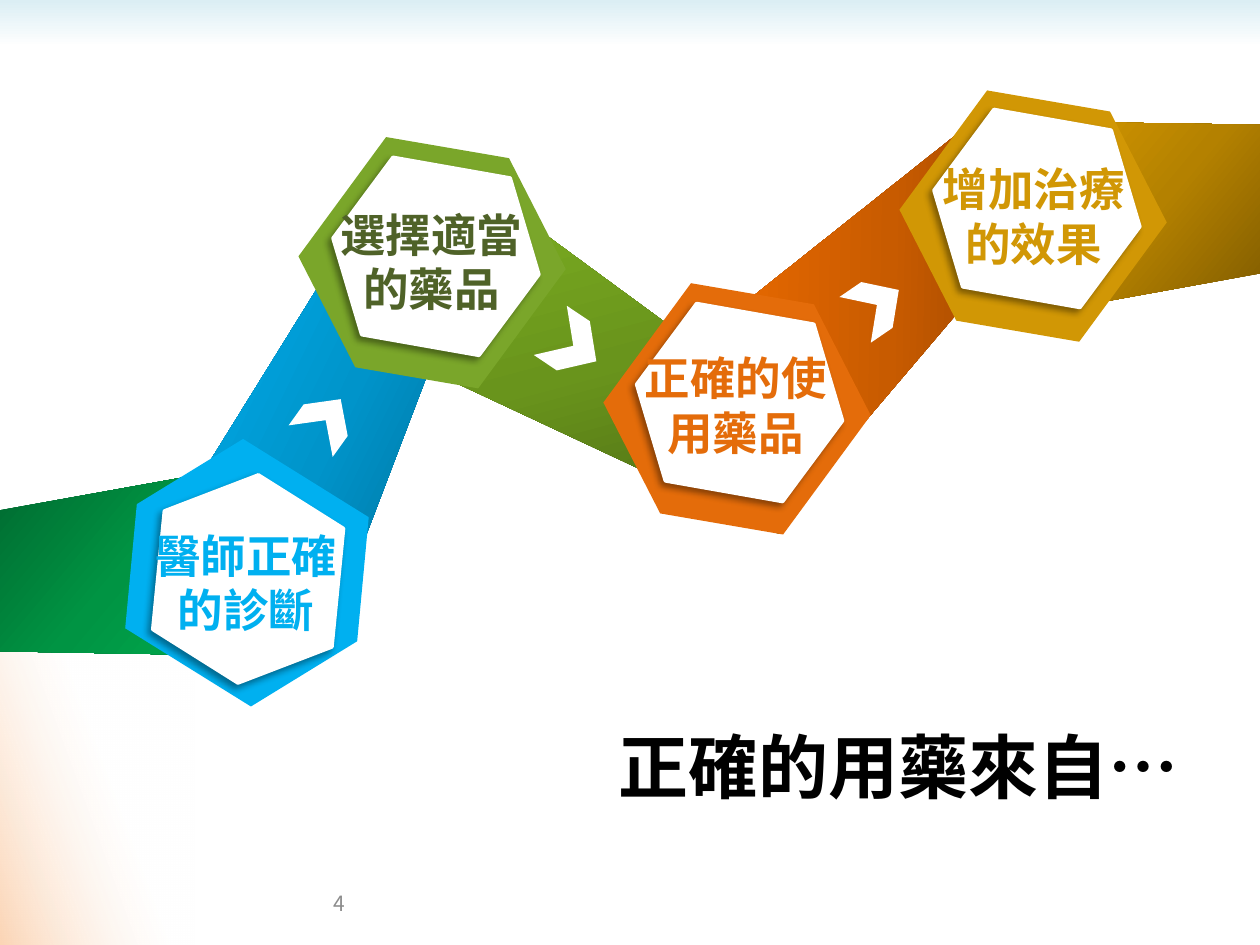
from lxml import etree
from pptx import Presentation
from pptx import util as u
from pptx.dml.color import RGBColor
from pptx.enum import shapes, text
from pptx.oxml import ns

CJK = "Noto Sans CJK SC"
C = {
    "white": "FFFFFF", "black": "000000", "grey": "8C8C8C",
    "sky": "DBEEF4", "peach": "FCD5B5",
    "blue": "00B0F0", "green": "7AA62A", "dark_green": "4F6228",
    "orange": "E46C0A", "gold": "D19705",
}
# Dark, middle and light stop of each ribbon
RIBBON = {
    "emerald": ("00682F", "009443", "00B050"),
    "gold": ("7F5B00", "B48100", "D69900"),
    "orange": ("8D4000", "C85B00", "EE6B00"),
    "green": ("4A6813", "69941C", "7DAF21"),
    "blue": ("00688E", "0094CA", "00B0F0"),
}
# Colour, gradient angle on the slide, corners
RIBBONS = [
    ("emerald", 40, [(2.12, 3.67), (1.69, 5.2), (0, 5.17), (0, 4.05)]),
    ("gold", 220, [(8.66, 0.97), (10, 0.99), (10, 2.17), (8.23, 2.49)]),
    ("orange", 181, [(5.55, 2.69), (7.74, 0.95), (8.58, 1.33), (6.19, 4.14)]),
    ("green", 255, [(4.08, 1.68), (6.33, 3.33), (6.18, 4.24), (2.85, 2.68)]),
    ("blue", 206, [(1.5, 3.93), (2.97, 1.56), (3.9, 1.64), (2.59, 5.08)]),
]
# Frame colour, frame corner and turn, inner corner and turn
BADGES = [
    ("blue", (0.93, 3.66), 211.9, (1.14, 3.88), 275.6),
    ("green", (2.4, 1.2), 306.3, (2.63, 1.32), 10),
    ("orange", (4.82, 2.36), 306.3, (5.04, 2.48), 10),
    ("gold", (7.17, 0.83), 306.3, (7.4, 0.94), 10),
]
# Text, colour, left, top, width
LABELS = [
    ("選擇適當的藥品", "dark_green", 2.56, 1.59, 1.73),
    ("醫師正確的診斷", "blue", 1.09, 4.14, 1.73),
    ("正確的使用藥品", "orange", 5, 2.73, 1.68),
    ("增加治療的效果", "gold", 7.31, 1.23, 1.79),
]
# Box and turn
CHEVRONS = [
    ((2.38, 3.12, 0.41, 0.43), 305.6),
    ((4.33, 2.51, 0.44, 0.47), 33.9),
    ((6.75, 2.2, 0.42, 0.44), 325.6),
]


def rgb(name):
    return RGBColor.from_string(C[name])


def add_xml(parent, tag, **attrs):
    return etree.SubElement(parent, ns.qn(tag), {k: str(v) for k, v in attrs.items()})


def set_gradient(s, stops, angle):
    """Fill with (position %, hex, opacity %) stops; the angle runs clockwise."""
    s.fill.gradient()
    grad = s._element.spPr.find(ns.qn("a:gradFill"))
    for child in list(grad):
        grad.remove(child)
    gs_list = add_xml(grad, "a:gsLst")
    for pos, color, opacity in stops:
        gs = add_xml(gs_list, "a:gs", pos=pos * 1000)
        clr = add_xml(gs, "a:srgbClr", val=color)
        if opacity < 100:
            add_xml(clr, "a:alpha", val=opacity * 1000)
    add_xml(grad, "a:lin", ang=angle * 60000, scaled=0)


def add_shape(parent, kind, box, fill=None, rot=0):
    s = parent.add_shape(kind, *map(u.Inches, box))
    s.rotation = rot
    s.shadow.inherit = False
    s.line.fill.background()
    if fill:
        s.fill.solid()
        s.fill.fore_color.rgb = rgb(fill)
    return s


def add_ribbon(parent, color, angle, points):
    builder = parent.build_freeform(*map(u.Inches, points[0]), scale=1.0)
    builder.add_line_segments([tuple(map(u.Inches, p)) for p in points[1:]], close=True)
    s = builder.convert_to_shape()
    s.shadow.inherit = False
    s.line.fill.background()
    set_gradient(s, [(pos, c, 100) for pos, c in zip((0, 50, 100), RIBBON[color])], angle)


def add_badge(parent, color, frame_at, frame_rot, inner_at, inner_rot):
    """Coloured hexagon with a white, shadowed hexagon on it."""
    hexagon = shapes.MSO_SHAPE.HEXAGON
    group = parent.add_group_shape().shapes
    add_shape(group, hexagon, (*frame_at, 2.06, 1.77), color, frame_rot)
    s = add_shape(group, hexagon, (*inner_at, 1.66, 1.43), "white", inner_rot)
    s.line.color.rgb = rgb("white")
    s.line.width = u.Pt(2)
    effects = s._element.spPr.find(ns.qn("a:effectLst"))
    shadow = add_xml(effects, "a:outerShdw", blurRad=u.Pt(4), dist=u.Pt(3),
                     dir=135 * 60000, algn="ctr", rotWithShape=0)
    add_xml(add_xml(shadow, "a:srgbClr", val=C["black"]), "a:alpha", val=40000)


def add_text(parent, content, box, *, size, color, bold=False, font=CJK,
             align=text.PP_ALIGN.CENTER, anchor=text.MSO_ANCHOR.TOP):
    tf = parent.add_textbox(*map(u.Inches, box)).text_frame
    tf.word_wrap = True
    tf.vertical_anchor = anchor
    p = tf.paragraphs[0]
    p.alignment = align
    r = p.add_run()
    r.text = content
    r.font.size = u.Pt(size)
    r.font.bold = bold
    r.font.color.rgb = rgb(color)
    r.font.name = font
    add_xml(r.font._element, "a:ea", typeface=CJK)


def main():
    prs = Presentation()
    prs.slide_width, prs.slide_height = u.Inches(10), u.Inches(7.5)
    sp = prs.slides.add_slide(prs.slide_layouts[6]).shapes

    # Background glows
    rect = shapes.MSO_SHAPE.RECTANGLE
    s = add_shape(sp, rect, (0, 0, 10, 1.62))
    set_gradient(s, [(77, C["white"], 100), (100, C["sky"], 100)], 270)
    s = add_shape(sp, rect, (-0.95, 5.01, 3.44, 1.54), rot=270)
    set_gradient(s, [(51, C["white"], 37), (100, C["peach"], 100)], 250)

    # Ribbons and the badges that join them
    for ribbon in RIBBONS:
        add_ribbon(sp, *ribbon)
    for badge in BADGES:
        add_badge(sp, *badge)

    # Badge labels and title
    for content, color, left, top, width in LABELS:
        add_text(sp, content, (left, top, width, 0.98), size=26, color=color, bold=True)
    add_text(sp, "正確的用藥來自…", (4.61, 5.69, 5.04, 0.77),
             size=40, color="black", bold=True, font="Arial Narrow")

    # Direction marks
    for box, rot in CHEVRONS:
        add_shape(sp, shapes.MSO_SHAPE.CHEVRON, box, "white", rot)

    # Slide number
    add_text(sp, "4", (0.67, 6.97, 2.17, 0.4), size=12, color="grey",
             align=text.PP_ALIGN.RIGHT, anchor=text.MSO_ANCHOR.MIDDLE)

    prs.save("out.pptx")


if __name__ == "__main__":
    main()
